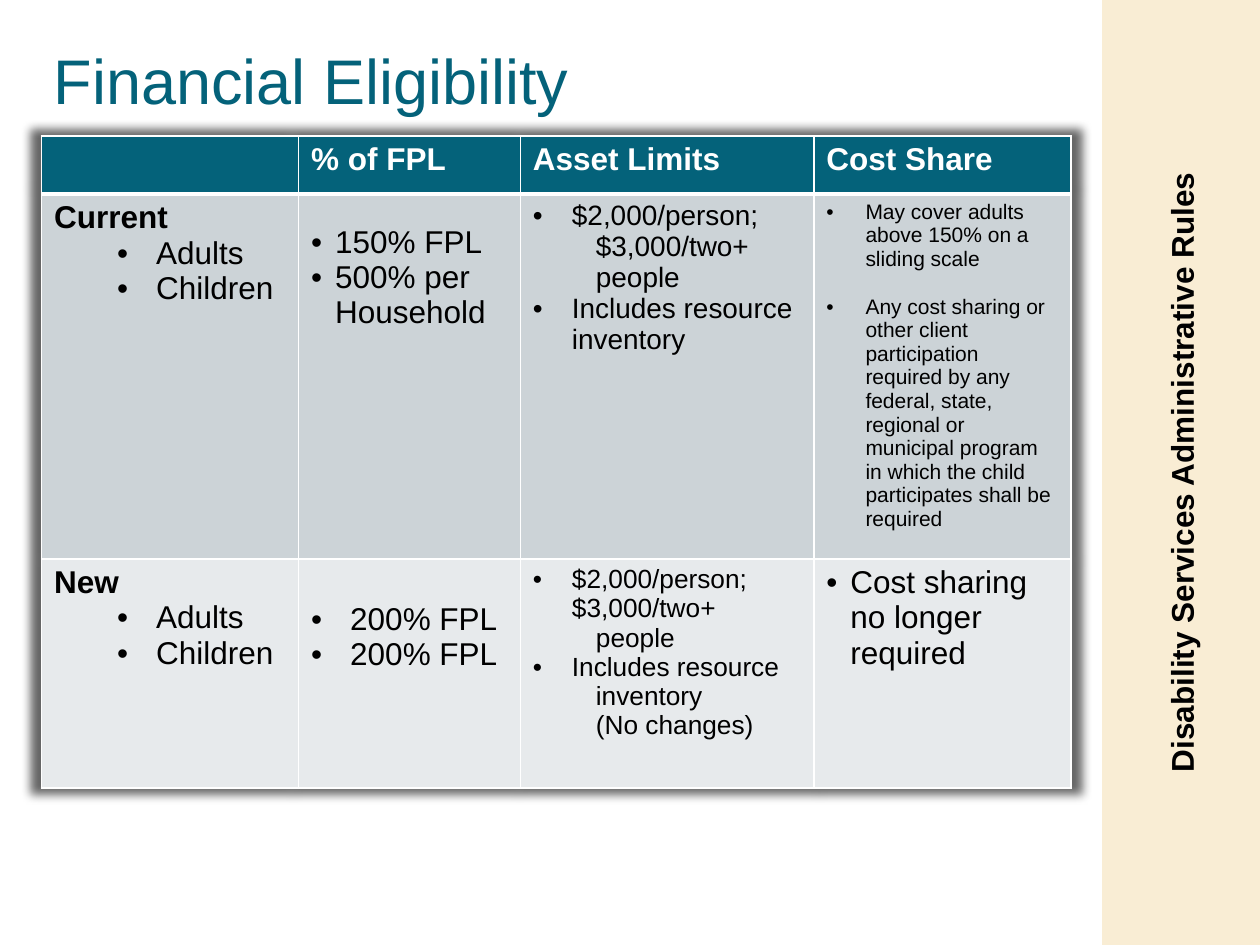
from lxml.etree import SubElement
from pptx import Presentation
from pptx.dml.color import RGBColor
from pptx.enum.shapes import MSO_SHAPE as Shape
from pptx.enum.text import MSO_ANCHOR as Anchor, PP_ALIGN as Align
from pptx.oxml import parse_xml
from pptx.oxml.ns import qn
from pptx.util import Inches, Pt

WIDTH, HEIGHT = 10, 7.5
SIDEBAR = WIDTH / 8
FONT = "Arial"
COLORS = {"teal": "04627A", "cream": "F9EDD4", "white": "FFFFFF",
          "black": "000000", "Current": "CCD3D7", "New": "E7EAEC"}

TITLE = "Financial Eligibility"
SIDE_TEXT = "Disability Services Administrative Rules"
HEADERS = ["", "% of FPL", "Asset Limits", "Cost Share"]
COLUMNS = [2.04, 1.76, 2.33, 2.04]
ROWS = [0.46, 2.89, 1.82]

# Paragraph kinds: left indent and hanging indent of the bullet
INDENTS = {"heading": (0, 0), "bullet": (0.31, 0.31), "tight": (0.19, 0.19),
           "group": (0.81, 0.31), "more": (0.5, 0)}
GROUPS = [("group", "Adults"), ("group", "Children")]

# Each cell: text size, gap above the text in points, paragraphs
BODY = {
    "Current": [
        (18, 0, [("heading", "Current"), *GROUPS]),
        (18, 14, [("tight", "150% FPL"), ("tight", "500% per Household")]),
        (16, 0, [("bullet", "$2,000/person;"), ("more", "$3,000/two+"),
                 ("more", "people"), ("bullet", "Includes resource inventory")]),
        (12, 0, [("bullet", "May cover adults above 150% on a sliding scale"),
                 ("bullet", "Any cost sharing or other client participation required "
                            "by any federal, state, regional or municipal program in "
                            "which the child participates shall be required")]),
    ],
    "New": [
        (18, 0, [("heading", "New"), *GROUPS]),
        (18, 21, [("bullet", "200% FPL")] * 2),
        (15, 0, [("bullet", "$2,000/person; $3,000/two+"), ("more", "people"),
                 ("bullet", "Includes resource"), ("more", "inventory"),
                 ("more", "(No changes)")]),
        (18, 0, [("tight", "Cost sharing no longer required")]),
    ],
}
SMALL_PRINT = 12  # text of this size has a blank line's gap between bullets


def rgb(name):
    return RGBColor.from_string(COLORS[name])


def write(frame, text, size=18, color="black", bold=False, kind="heading",
          first=True, before=0, align=Align.LEFT):
    """Put one paragraph in a text frame, with the indent and bullet of its kind."""
    para = frame.paragraphs[0] if first else frame.add_paragraph()
    left, hang = INDENTS[kind]
    props = para._p.get_or_add_pPr()
    props.set("marL", str(Inches(left)))
    props.set("indent", str(-Inches(hang)))
    if hang:
        SubElement(props, qn("a:buFont"), typeface=FONT)
        SubElement(props, qn("a:buChar"), char="•")
    para.alignment = align
    if before:
        para.space_before = Pt(before)
    span = para.add_run()
    span.text = text
    span.font.name, span.font.size, span.font.bold = FONT, Pt(size), bold
    span.font.color.rgb = rgb(color)
    return para


def paint(cell, fill, top=1, bottom=1):
    """Give a cell white borders and a plain fill."""
    props = cell._tc.get_or_add_tcPr()
    for side, points in {"L": 1, "R": 1, "T": top, "B": bottom}.items():
        line = SubElement(props, qn(f"a:ln{side}"), w=str(Pt(points)))
        SubElement(SubElement(line, qn("a:solidFill")), qn("a:srgbClr"),
                   val=COLORS["white"])
    cell.fill.solid()
    cell.fill.fore_color.rgb = rgb(fill)


def add_title(page):
    box = page.shapes.add_textbox(Inches(0.33), Inches(0.33), Inches(8.62), Inches(0.57))
    frame = box.text_frame
    frame.word_wrap = True
    frame.margin_top = Inches(0.07)
    write(frame, TITLE, size=36, color="teal").line_spacing = 0.9


def add_eligibility_table(page):
    table = page.shapes.add_table(len(ROWS), len(COLUMNS), Inches(0.33), Inches(1.08),
                                  Inches(sum(COLUMNS)), Inches(sum(ROWS))).table
    table._tbl.tblPr.insert(0, parse_xml(
        '<a:effectLst xmlns:a="http://schemas.openxmlformats.org/drawingml/2006/main">'
        '<a:outerShdw blurRad="63500" sx="102000" sy="102000" algn="ctr" rotWithShape="0">'
        '<a:srgbClr val="000000"><a:alpha val="60000"/></a:srgbClr>'
        '</a:outerShdw></a:effectLst>'))
    for column, width in zip(table.columns, COLUMNS):
        column.width = Inches(width)
    for row, height in zip(table.rows, ROWS):
        row.height = Inches(height)

    for cell, text in zip(table.rows[0].cells, HEADERS):
        paint(cell, "teal", bottom=3)
        if text:
            write(cell.text_frame, text, color="white", bold=True)

    for index, (name, contents) in enumerate(BODY.items(), start=1):
        for cell, (size, gap, paras) in zip(table.rows[index].cells, contents):
            paint(cell, name, top=3 if index == 1 else 1)
            cell.margin_top = Inches(0.05) + Pt(gap)
            for number, (kind, text) in enumerate(paras):
                spaced = number and size == SMALL_PRINT
                write(cell.text_frame, text, size=size, kind=kind, first=number == 0,
                      bold=kind == "heading", before=14 if spaced else 0)


def add_sidebar(page):
    """Add the band on the right, a wide bar turned a quarter to the left."""
    left = WIDTH - SIDEBAR / 2 - HEIGHT / 2
    top = (HEIGHT - SIDEBAR) / 2
    bar = page.shapes.add_shape(Shape.RECTANGLE, Inches(left), Inches(top),
                                Inches(HEIGHT), Inches(SIDEBAR))
    bar.rotation = 270
    bar.shadow.inherit = False
    bar.fill.solid()
    bar.fill.fore_color.rgb = bar.line.color.rgb = rgb("cream")
    bar.line.width = Pt(1)
    bar.text_frame.word_wrap = True
    bar.text_frame.vertical_anchor = Anchor.MIDDLE
    write(bar.text_frame, SIDE_TEXT, bold=True, align=Align.CENTER)


def main():
    deck = Presentation()
    deck.slide_width, deck.slide_height = Inches(WIDTH), Inches(HEIGHT)
    page = deck.slides.add_slide(deck.slide_layouts[6])
    add_title(page)
    add_eligibility_table(page)
    add_sidebar(page)
    deck.save("out.pptx")


if __name__ == "__main__":
    main()
